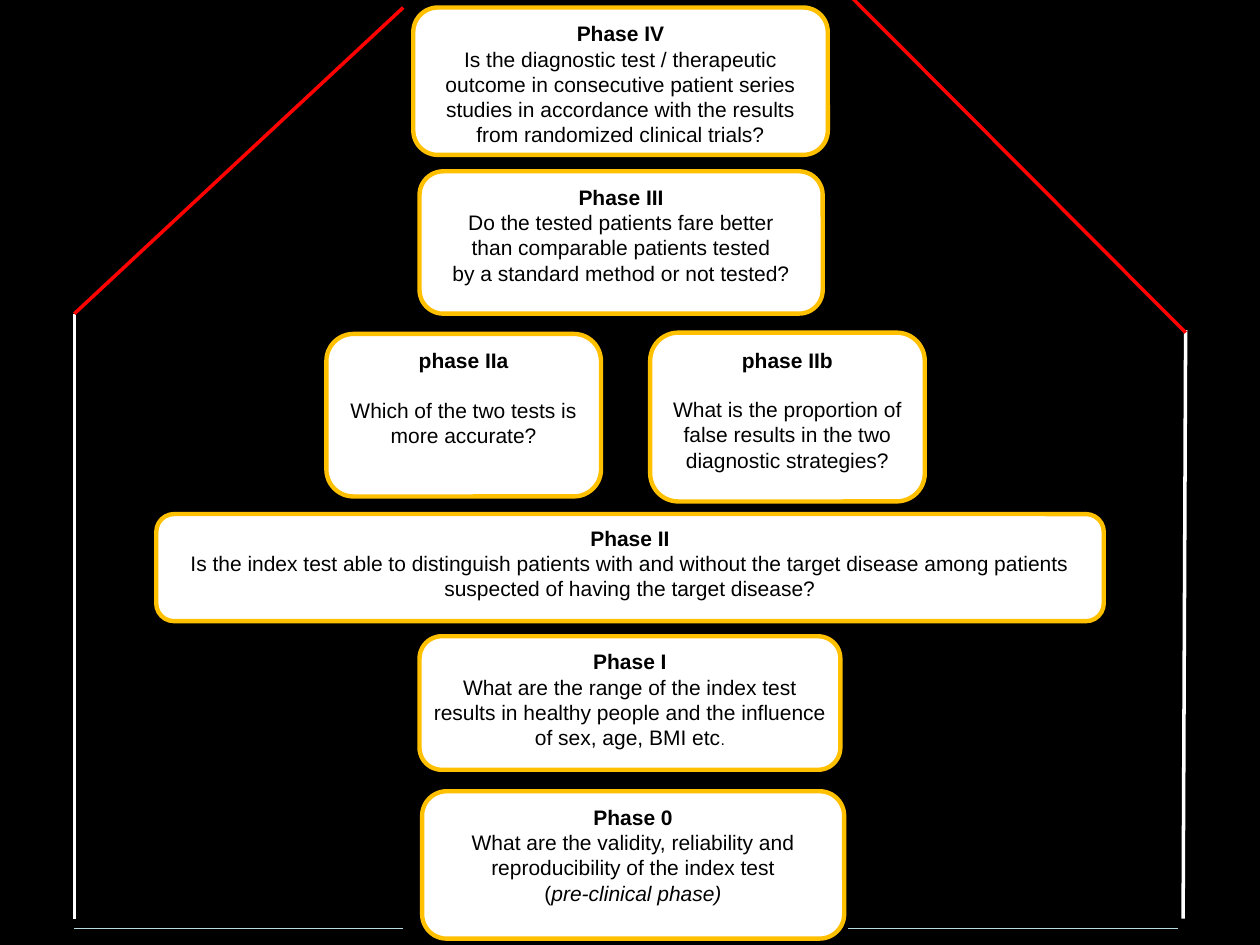
from lxml import etree
from pptx import Presentation
from pptx.dml.color import RGBColor
from pptx.enum.shapes import MSO_CONNECTOR, MSO_SHAPE
from pptx.enum.text import MSO_ANCHOR, PP_ALIGN
from pptx.oxml.ns import qn
from pptx.util import Inches, Pt

BLACK = RGBColor(0x00, 0x00, 0x00)
WHITE = RGBColor(0xFF, 0xFF, 0xFF)
AMBER = RGBColor(0xFF, 0xC0, 0x00)
RED = RGBColor(0xFF, 0x00, 0x00)
PALE_TEAL = RGBColor(0xB6, 0xDC, 0xDF)

TEXT_SIZE = 12
HEADING_GAP = 14

# (left, top, width, height), heading, gap below heading, paragraphs of
# (text, size, italic) runs
PHASES = [
    ((3.35, 6.28, 3.35, 1.17), "Phase 0", 0, [
        [("What are the validity, reliability and", TEXT_SIZE, False)],
        [("reproducibility of the index test", TEXT_SIZE, False)],
        [("(", TEXT_SIZE, False), ("pre-clinical phase)", TEXT_SIZE, True)]]),
    ((3.33, 5.05, 3.34, 1.06), "Phase I", 0, [
        [("What are the range of the index test results in healthy people "
          "and the influence of sex, age, BMI etc", TEXT_SIZE, False),
         (".", 9, False)]]),
    ((2.59, 2.65, 2.18, 1.29), "phase IIa", HEADING_GAP, [
        [("Which of the two tests is more accurate?", TEXT_SIZE, False)]]),
    ((5.16, 2.64, 2.18, 1.34), "phase IIb", HEADING_GAP, [
        [("What is the proportion of false results in the two diagnostic "
          "strategies?", TEXT_SIZE, False)]]),
    ((1.24, 4.08, 7.52, 0.85), "Phase II", 0, [
        [("Is the index test able to distinguish patients with and without "
          "the target disease among patients suspected of having the target "
          "disease?", TEXT_SIZE, False)]]),
    ((3.33, 1.36, 3.2, 1.13), "Phase III", 0, [
        [("Do the tested patients fare better", TEXT_SIZE, False)],
        [("than comparable patients tested", TEXT_SIZE, False)],
        [("by a standard method or not tested?", TEXT_SIZE, False)]]),
    ((3.28, 0.06, 3.29, 1.17), "Phase IV", 0, [
        [("Is the diagnostic test / therapeutic outcome in consecutive "
          "patient series studies in accordance with the results from "
          "randomized clinical trials?", TEXT_SIZE, False)]]),
]

# start, end, colour, width
HOUSE_LINES = [
    ((0.59, 7.29), (0.59, 2.49), WHITE, 2),
    ((9.39, 7.29), (9.41, 2.62), WHITE, 2),
    ((0.59, 2.49), (3.2, 0.06), RED, 2),
    ((9.41, 2.64), (6.75, -0.03), RED, 2),
    ((0.59, 7.37), (3.2, 7.37), PALE_TEAL, 0.75),
    ((6.73, 7.37), (9.35, 7.37), PALE_TEAL, 0.75),
]


def style_paragraph(paragraph, bold=False):
    paragraph.alignment = PP_ALIGN.CENTER
    paragraph.font.name = "Arial"
    paragraph.font.size = Pt(TEXT_SIZE)
    paragraph.font.bold = bold
    paragraph.font.color.rgb = BLACK


def add_phase(slide, bounds, heading, heading_gap, question):
    box = slide.shapes.add_shape(MSO_SHAPE.ROUNDED_RECTANGLE,
                                 *(Inches(length) for length in bounds))
    box.shadow.inherit = False
    box.fill.solid()
    box.fill.fore_color.rgb = WHITE
    box.line.color.rgb = AMBER
    box.line.width = Pt(2.5)

    frame = box.text_frame
    frame.word_wrap = True
    frame.vertical_anchor = MSO_ANCHOR.TOP
    frame.margin_left = frame.margin_right = Inches(0.05)
    frame.margin_top = frame.margin_bottom = Inches(0.05)

    title = frame.paragraphs[0]
    title.text = heading
    title.space_after = Pt(heading_gap)
    style_paragraph(title, bold=True)
    for pieces in question:
        paragraph = frame.add_paragraph()
        style_paragraph(paragraph)
        for text, size, italic in pieces:
            run = paragraph.add_run()
            run.text = text
            if size != TEXT_SIZE:
                run.font.size = Pt(size)
            if italic:
                run.font.italic = True


def add_house_line(slide, start, end, color, width):
    edge = slide.shapes.add_connector(
        MSO_CONNECTOR.STRAIGHT, *(Inches(length) for length in start + end))
    edge.line.color.rgb = color
    edge.line.width = Pt(width)
    etree.SubElement(edge._element.spPr, qn("a:effectLst"))


def main():
    presentation = Presentation()
    presentation.slide_width = Inches(10)
    presentation.slide_height = Inches(7.5)
    slide = presentation.slides.add_slide(presentation.slide_layouts[6])
    slide.background.fill.solid()
    slide.background.fill.fore_color.rgb = BLACK

    for phase in PHASES:
        add_phase(slide, *phase)
    for house_line in HOUSE_LINES:
        add_house_line(slide, *house_line)

    presentation.save("out.pptx")


if __name__ == "__main__":
    main()
